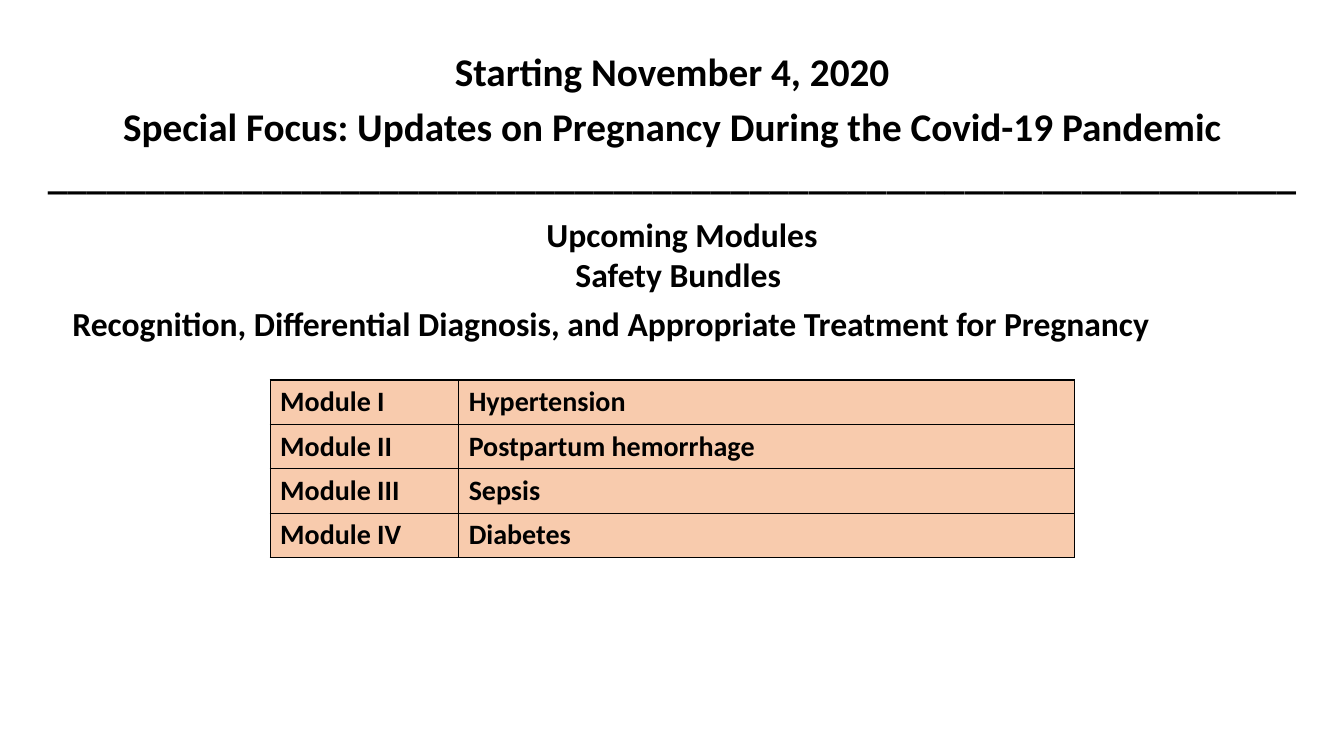
from dataclasses import dataclass

from lxml import etree
from pptx import Presentation
from pptx.dml.color import RGBColor
from pptx.enum.text import PP_ALIGN
from pptx.oxml.ns import qn
from pptx.util import Inches, Pt

LEFT, CENTER = PP_ALIGN.LEFT, PP_ALIGN.CENTER
SLIDE_WIDTH, SLIDE_HEIGHT = Inches(13.33), Inches(7.5)
FONT = "Calibri"
INK = "000000"
PEACH = "F8CBAD"
BORDER_WIDTH = Pt(1)
BORDER_SIDES = ("a:lnL", "a:lnR", "a:lnT", "a:lnB")


@dataclass(frozen=True)
class Line:
    text: str
    align: PP_ALIGN = CENTER
    space_after: float = 0


@dataclass(frozen=True)
class TextBlock:
    """Left, top, width and height are percentages of the slide."""
    left: float
    top: float
    width: float
    height: float
    size: float
    lines: tuple[Line, ...]


@dataclass(frozen=True)
class Module:
    number: str
    topic: str


ANNOUNCEMENT = TextBlock(0, 5.6, 100, 21.33, 28, (
    Line("Starting November 4, 2020", space_after=6),
    Line("Special Focus: Updates on Pregnancy During the Covid-19 Pandemic"),
    Line("_" * 64),
))
UPCOMING = TextBlock(4.65, 27.6, 92.2, 24, 24, (
    Line("Upcoming Modules"),
    Line("Safety Bundles ", space_after=6),
    Line("Recognition, Differential Diagnosis, and Appropriate Treatment for Pregnancy", LEFT),
))
MODULES = (
    Module("Module I", "Hypertension"),
    Module("Module II", "Postpartum hemorrhage"),
    Module("Module III", "Sepsis"),
    Module("Module IV", "Diabetes"),
)
MODULES_LEFT, MODULES_TOP = 20.1, 50.27
COLUMN_WIDTHS = (14.03, 45.84)
ROW_HEIGHT = 5.87
MODULE_SIZE = 20


def across(percent: float) -> int:
    return round(SLIDE_WIDTH * percent / 100)


def down(percent: float) -> int:
    return round(SLIDE_HEIGHT * percent / 100)


def color(value: str) -> RGBColor:
    return RGBColor.from_string(value)


def write_line(paragraph, line: Line, size: float) -> None:
    paragraph.alignment = line.align
    paragraph.space_after = Pt(line.space_after)
    run = paragraph.add_run()
    run.text = line.text
    run.font.name = FONT
    run.font.size = Pt(size)
    run.font.bold = True
    run.font.color.rgb = color(INK)


def draw_text_block(slide, block: TextBlock) -> None:
    frame = slide.shapes.add_textbox(across(block.left), down(block.top),
                                     across(block.width), down(block.height)).text_frame
    frame.word_wrap = True
    for index, line in enumerate(block.lines):
        paragraph = frame.add_paragraph() if index else frame.paragraphs[0]
        write_line(paragraph, line, block.size)


def outline_cell(cell) -> None:
    properties = cell._tc.get_or_add_tcPr()
    for side in BORDER_SIDES:
        border = etree.SubElement(properties, qn(side), w=str(BORDER_WIDTH))
        fill = etree.SubElement(border, qn("a:solidFill"))
        etree.SubElement(fill, qn("a:srgbClr"), val=INK)


def draw_modules(slide, modules: tuple[Module, ...]) -> None:
    table = slide.shapes.add_table(
        len(modules), len(COLUMN_WIDTHS), across(MODULES_LEFT), down(MODULES_TOP),
        across(sum(COLUMN_WIDTHS)), down(ROW_HEIGHT * len(modules))).table
    table.first_row = table.horz_banding = False
    for column, width in zip(table.columns, COLUMN_WIDTHS):
        column.width = across(width)
    for row, module in zip(table.rows, modules):
        row.height = down(ROW_HEIGHT)
        for cell, text in zip(row.cells, (module.number, module.topic)):
            outline_cell(cell)
            cell.fill.solid()
            cell.fill.fore_color.rgb = color(PEACH)
            write_line(cell.text_frame.paragraphs[0], Line(text, LEFT), MODULE_SIZE)


def main() -> None:
    presentation = Presentation()
    presentation.slide_width = SLIDE_WIDTH
    presentation.slide_height = SLIDE_HEIGHT
    slide = presentation.slides.add_slide(presentation.slide_layouts[6])
    for block in (UPCOMING, ANNOUNCEMENT):
        draw_text_block(slide, block)
    draw_modules(slide, MODULES)
    presentation.save("out.pptx")


if __name__ == "__main__":
    main()
